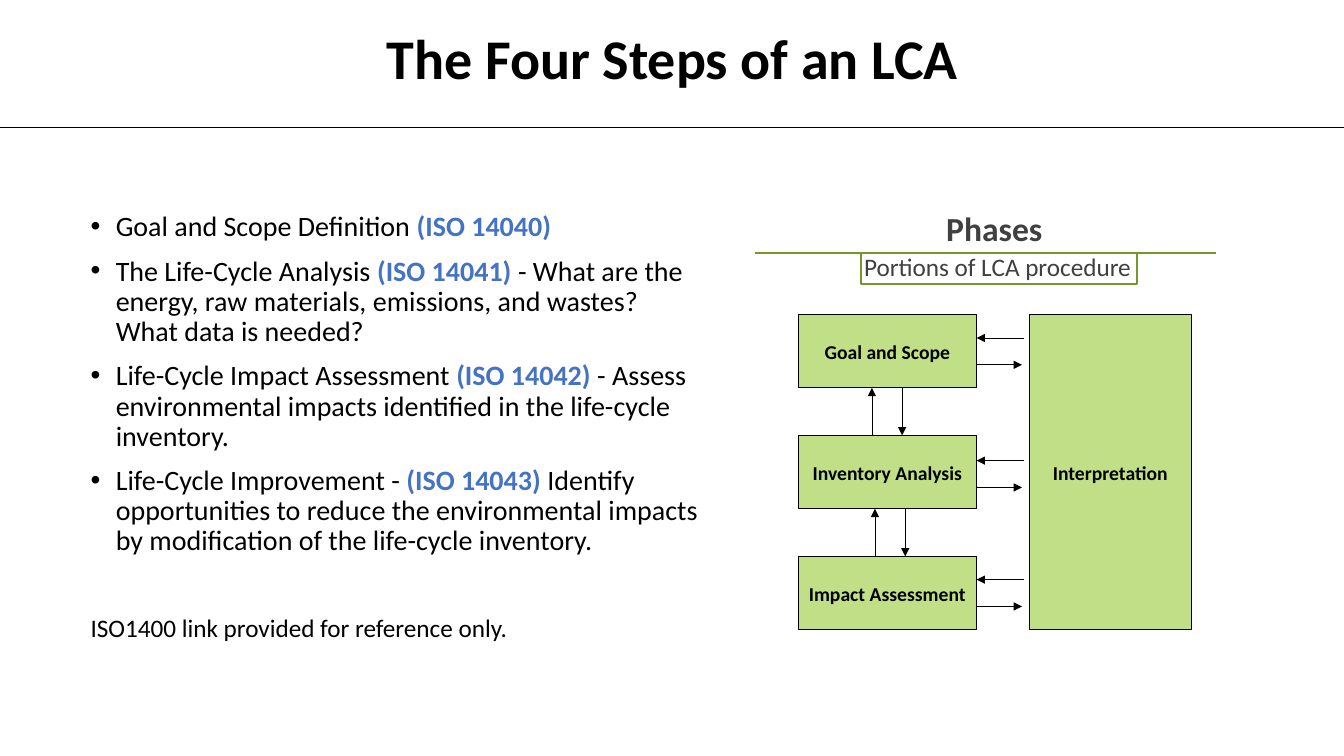
from dataclasses import dataclass

from lxml.etree import SubElement
from pptx import Presentation
from pptx.dml.color import RGBColor
from pptx.enum.shapes import MSO_CONNECTOR, MSO_SHAPE
from pptx.enum.text import MSO_ANCHOR, PP_ALIGN
from pptx.oxml.ns import qn
from pptx.util import Pt


@dataclass(frozen=True)
class Theme:
    font: str = "Calibri"
    black: str = "000000"
    gray: str = "404040"
    blue: str = "4472C4"
    box_fill: str = "C1DF87"
    green: str = "739A28"
    title: float = 40
    heading: float = 24
    body: float = 20
    note: float = 18
    label: float = 14
    thin: float = 0.5
    rule: float = 1.5


class SlideBuilder:
    def __init__(self, deck, theme):
        self.theme = theme
        self.page = deck.slides.add_slide(deck.slide_layouts[6])

    def frame(self, shape, inset=(7.2, 3.6), anchor=MSO_ANCHOR.TOP):
        frame = shape.text_frame
        frame.word_wrap = True
        frame.margin_left = frame.margin_right = Pt(inset[0])
        frame.margin_top = frame.margin_bottom = Pt(inset[1])
        frame.vertical_anchor = anchor
        return frame

    def text_box(self, left, top, width, height, **options):
        box = self.page.shapes.add_textbox(Pt(left), Pt(top), Pt(width), Pt(height))
        return self.frame(box, **options)

    def paragraph(self, frame, first=False, align=PP_ALIGN.LEFT, spacing=0.9,
                  before=0, after=0, indent=0, bullet=False):
        para = frame.paragraphs[0] if first else frame.add_paragraph()
        para.alignment = align
        para.line_spacing = spacing
        para.space_before, para.space_after = Pt(before), Pt(after)
        properties = para._p.get_or_add_pPr()
        properties.set("marL", str(Pt(indent)))
        properties.set("indent", str(Pt(-indent if bullet else 0)))
        if bullet:
            SubElement(properties, qn("a:buFont"), typeface="Arial")
            SubElement(properties, qn("a:buChar"), char="•")
        return para

    def span(self, para, text, size, color=None, bold=False):
        span = para.add_run()
        span.text = text
        span.font.name = self.theme.font
        span.font.size = Pt(size)
        span.font.bold = bold
        span.font.color.rgb = RGBColor.from_string(color or self.theme.black)

    def rectangle(self, left, top, width, height, line, weight, fill=None):
        box = self.page.shapes.add_shape(
            MSO_SHAPE.RECTANGLE, Pt(left), Pt(top), Pt(width), Pt(height))
        box.shadow.inherit = False
        if fill:
            box.fill.solid()
            box.fill.fore_color.rgb = RGBColor.from_string(fill)
        else:
            box.fill.background()
        box.line.color.rgb = RGBColor.from_string(line)
        box.line.width = Pt(weight)
        return box

    def step_box(self, text, left, top, width, height):
        theme = self.theme
        box = self.rectangle(left, top, width, height, theme.black, theme.thin,
                             theme.box_fill)
        frame = self.frame(box, inset=(4, 3.6), anchor=MSO_ANCHOR.MIDDLE)
        para = self.paragraph(frame, first=True, align=PP_ALIGN.CENTER,
                              spacing=1.05, after=8)
        self.span(para, text, theme.label, bold=True)

    def line(self, start, end, color=None, weight=None, arrow=False):
        line = self.page.shapes.add_connector(
            MSO_CONNECTOR.STRAIGHT, *(Pt(value) for value in (*start, *end)))
        line.line.color.rgb = RGBColor.from_string(color or self.theme.black)
        line.line.width = Pt(weight or self.theme.thin)
        if arrow:
            SubElement(line.line._get_or_add_ln(), qn("a:tailEnd"), type="triangle")
        SubElement(line._element.spPr, qn("a:effectLst"))


def add_title(builder):
    theme = builder.theme
    frame = builder.text_box(203.8, 18, 553, 51, anchor=MSO_ANCHOR.MIDDLE)
    para = builder.paragraph(frame, first=True, align=PP_ALIGN.CENTER)
    builder.span(para, "The Four Steps of an LCA", theme.title, bold=True)
    builder.line((0, 90.7), (960, 90.7))


def add_steps(builder):
    theme = builder.theme
    steps = [
        ("Goal and Scope Definition ", "(ISO 14040)", ""),
        ("The Life-Cycle Analysis ", "(ISO 14041) ",
         "- What are the energy, raw materials, emissions, and wastes? "
         "What data is needed?"),
        ("Life-Cycle Impact Assessment ", "(ISO 14042) ",
         "- Assess environmental impacts identified in the life-cycle inventory."),
        ("Life-Cycle Improvement - ", "(ISO 14043)",
         " Identify opportunities to reduce the environmental impacts "
         "by modification of the life-cycle inventory."),
    ]
    frame = builder.text_box(57.6, 148.3, 450, 317.5)
    for index, (name, standard, detail) in enumerate(steps):
        para = builder.paragraph(frame, first=index == 0, before=10,
                                 indent=18, bullet=True)
        builder.span(para, name, theme.body)
        builder.span(para, standard, theme.body, theme.blue, bold=True)
        if detail:
            builder.span(para, detail, theme.body)
    note = builder.paragraph(frame, before=42)
    builder.span(note, "ISO1400 link provided for reference only.", theme.note)


def add_phases_heading(builder):
    theme = builder.theme
    frame = builder.text_box(508.3, 148.3, 396.7, 72, inset=(0, 3.6))
    heading = builder.paragraph(frame, first=True, align=PP_ALIGN.CENTER,
                                before=12, after=2, indent=7.2)
    builder.span(heading, "Phases", theme.heading, theme.gray, bold=True)
    caption = builder.paragraph(frame, align=PP_ALIGN.CENTER,
                                before=2, after=4, indent=15.8)
    builder.span(caption, "Portions of LCA procedure ", theme.note, theme.gray)
    builder.line((539.3, 180.7), (868.3, 180.7), theme.green, theme.rule)
    builder.rectangle(614.9, 180.7, 197.3, 22.3, theme.green, theme.rule)


def add_phase_diagram(builder):
    left, top, width, height, pitch = 570.2, 224.6, 127.4, 52.4, 86.4
    right = left + width
    phases = ["Goal and Scope", "Inventory Analysis", "Impact Assessment"]
    returns = [241.4, 329, 414]
    for row, (phase, back) in enumerate(zip(phases, returns)):
        box_top = top + row * pitch
        builder.step_box(phase, left, box_top, width, height)
        builder.line((right + 33.8, back), (right, back), arrow=True)
        builder.line((right, back + 19.2), (right + 32.4, back + 19.2), arrow=True)
    builder.step_box("Interpretation", 735.1, top, 116, 2 * pitch + height)
    for row, up in enumerate((622.8, 625)):
        upper = top + row * pitch + height
        lower = top + (row + 1) * pitch
        builder.line((up, lower), (up, upper), arrow=True)
        builder.line((up + 21.6, upper), (up + 21.6, lower), arrow=True)


def main():
    deck = Presentation()
    deck.slide_width, deck.slide_height = Pt(960), Pt(540)
    builder = SlideBuilder(deck, Theme())
    add_title(builder)
    add_steps(builder)
    add_phase_diagram(builder)
    add_phases_heading(builder)
    deck.save("out.pptx")


if __name__ == "__main__":
    main()
